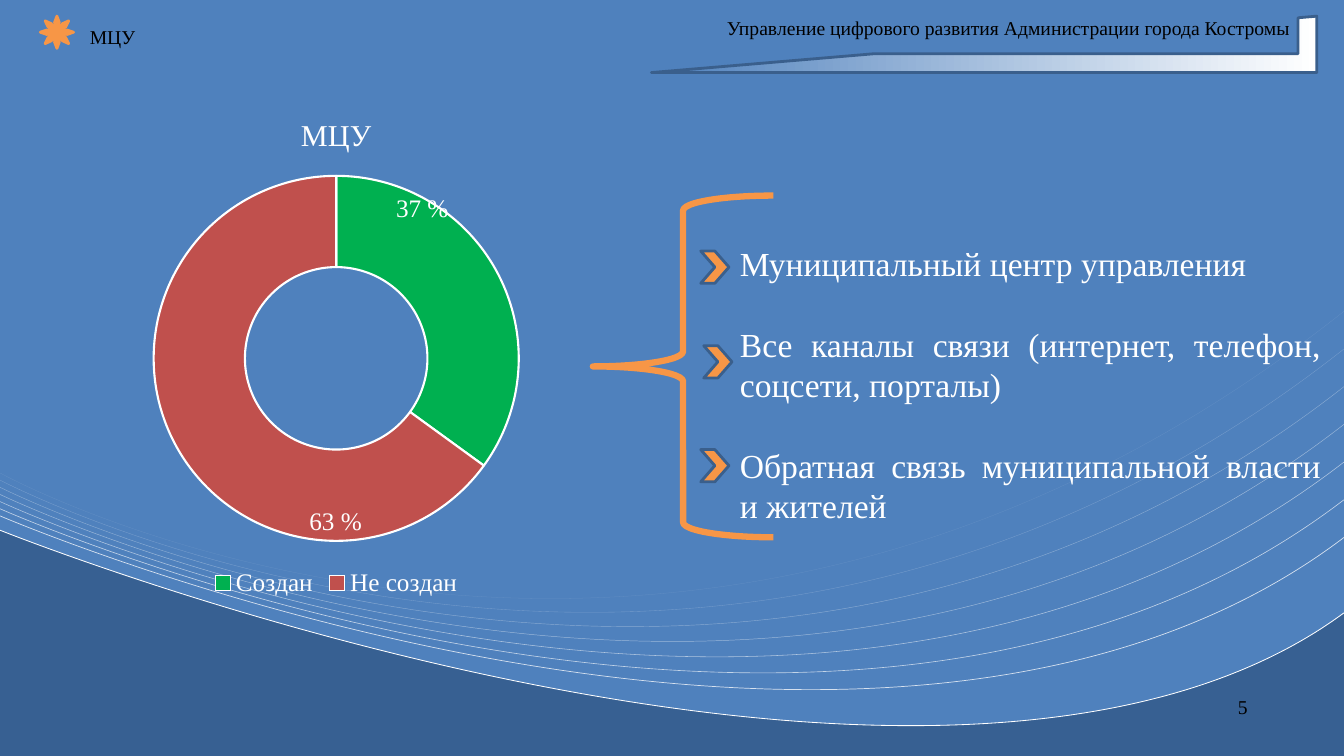
from lxml.etree import SubElement
from pptx import Presentation
from pptx.chart.data import CategoryChartData
from pptx.dml.color import RGBColor
from pptx.enum.chart import XL_CHART_TYPE, XL_LEGEND_POSITION
from pptx.enum.shapes import MSO_SHAPE
from pptx.enum.text import MSO_ANCHOR, PP_ALIGN
from pptx.oxml import parse_xml
from pptx.oxml.ns import nsdecls, qn
from pptx.util import Inches, Pt

NAVY = RGBColor(0x37, 0x60, 0x92)
BLUE = RGBColor(0x4F, 0x81, 0xBD)
EDGE = RGBColor(0x3A, 0x5F, 0x8C)
ORANGE = RGBColor(0xF7, 0x96, 0x46)
GREEN = RGBColor(0x00, 0xB0, 0x50)
RED = RGBColor(0xC0, 0x50, 0x4D)
WHITE = RGBColor(0xFF, 0xFF, 0xFF)
BLACK = RGBColor(0, 0, 0)

WIDTH, HEIGHT = 13.33, 7.5
FONT = "Times New Roman"


def set_font(font, size, color):
    for name, value in {"name": FONT, "size": Pt(size), "bold": False}.items():
        setattr(font, name, value)
    font.color.rgb = color


def write(sp, lines, size, color, wrap=True, **paragraph_format):
    tf = sp.text_frame
    tf.word_wrap = wrap
    tf.vertical_anchor = MSO_ANCHOR.TOP
    for i, line in enumerate(lines):
        p = tf.paragraphs[0] if i == 0 else tf.add_paragraph()
        p.alignment = PP_ALIGN.LEFT
        for name, value in paragraph_format.items():
            setattr(p, name, value)
        if i == 0:
            p.space_before = Pt(0)
        r = p.add_run()
        r.text = line
        set_font(r.font, size, color)


def add_text(slide, box, lines, size, color, **options):
    sp = slide.shapes.add_textbox(*map(Inches, box))
    write(sp, lines, size, color, **options)


def add_figure(slide, kind, box, line, width, fill=None):
    sp = slide.shapes.add_shape(kind, *map(Inches, box))
    sp.shadow.inherit = False
    if fill is None:
        sp.fill.background()
    else:
        sp.fill.solid()
        sp.fill.fore_color.rgb = fill
    sp.line.color.rgb = line
    sp.line.width = Pt(width)
    return sp


def add_wave(slide, i, closed=False):
    """Adds the i-th wave as one cubic curve; a closed one takes in all above it."""
    w, h = Inches(WIDTH), Inches(7.48)
    builder = slide.shapes.build_freeform(0, 0, scale=1.0)
    builder.add_line_segments([(w, 0), (w, h), (0, h)], close=closed)
    sp = builder.convert_to_shape()
    sp.shadow.inherit = False

    start = (0, 5.26 - 0.071 * i)
    control = (9.36 - 0.336 * i, 9.01 - 0.08 * i)
    end = (WIDTH, 6.08 - 0.374 * i)
    segments = [("moveTo", [start]), ("cubicBezTo", [start, control, end])]
    if closed:
        segments += [("lnTo", [(WIDTH, 0)]), ("lnTo", [(0, 0)]), ("close", [])]
    outline = sp._element.find(".//" + qn("a:path"))
    for old in list(outline):
        outline.remove(old)
    for tag, points in segments:
        segment = SubElement(outline, qn("a:" + tag))
        for x, y in points:
            SubElement(segment, qn("a:pt"), x=str(Inches(x)), y=str(Inches(y)))
    return sp


def add_background(slide):
    fill = slide.background.fill
    fill.solid()
    fill.fore_color.rgb = NAVY
    field = add_wave(slide, 0, closed=True)
    field.fill.solid()
    field.fill.fore_color.rgb = BLUE
    field.line.fill.background()
    for i in (0, *range(2, 9)):
        wave = add_wave(slide, i)
        wave.fill.background()
        wave.line.color.rgb = WHITE
        wave.line.width = Pt(0.6 - 0.05 * i)
        if i:
            color = wave.line._ln.find(".//" + qn("a:srgbClr"))
            SubElement(color, qn("a:alpha"), val=str(100000 - 11250 * i))


def add_header(slide, x, y):
    frame = add_figure(slide, MSO_SHAPE.HALF_FRAME, (x + 6.06, y, 6.6, 0.56), EDGE, 2, BLUE)
    frame.rotation = 180
    frame.fill.gradient()
    frame.fill.gradient_angle = 180
    for stop, color in zip(frame.fill.gradient_stops, (BLUE, WHITE)):
        stop.color.rgb = color
    add_text(slide, (x + 6.71, y - 0.05, 5.81, 0.33),
             ["Управление цифрового развития Администрации города Костромы"],
             14, BLACK, wrap=False)
    add_figure(slide, MSO_SHAPE.SUN, (x, y, 0.33, 0.32), ORANGE, 2, ORANGE)

    title = slide.shapes.title
    box = {"left": x + 0.39, "top": y + 0.04, "width": 3.04, "height": 0.33}
    for name, value in box.items():
        setattr(title, name, Inches(value))
    write(title, ["МЦУ"], 14, BLACK)
    slide.shapes._spTree.append(title._element)  # above the background


def add_doughnut(slide, x, y, w, h):
    data = CategoryChartData()
    data.categories = ["Создан", "Не создан"]
    data.add_series("МЦУ", (35, 65))
    chart = slide.shapes.add_chart(
        XL_CHART_TYPE.DOUGHNUT, *map(Inches, (x, y, w, h)), data).chart
    set_font(chart.font, 18, WHITE)
    chart.has_title = True
    chart.chart_title.text_frame.text = "МЦУ"
    set_font(chart.chart_title.text_frame.paragraphs[0].runs[0].font, 21.6, WHITE)
    chart.has_legend = True
    chart.legend.position = XL_LEGEND_POSITION.BOTTOM
    chart.legend.include_in_layout = False
    set_font(chart.legend.font, 18, WHITE)

    plot = chart.plots[0]
    plot.vary_by_categories = True
    plot.has_data_labels = False
    for i, color in enumerate((GREEN, RED)):
        point = plot.series[0].points[i].format
        point.fill.solid()
        point.fill.fore_color.rgb = color
        point.line.color.rgb = WHITE
        point.line.width = Pt(1.5)

    area = chart._chartSpace.find(".//" + qn("c:plotArea"))
    area.find(".//" + qn("c:holeSize")).set("val", "75")
    for old in area.findall(qn("c:layout")):
        area.remove(old)
    sizes = {"x": 0.22, "y": 0.16, "w": 0.56, "h": 0.72}
    values = "".join(f'<c:{k} val="{v}"/>' for k, v in sizes.items())
    area.insert(0, parse_xml(
        f'<c:layout {nsdecls("c")}><c:manualLayout><c:layoutTarget val="inner"/>'
        f'<c:xMode val="edge"/><c:yMode val="edge"/>{values}'
        '</c:manualLayout></c:layout>'))

    for label, dx, dy in (("37 %", 3.83, 0.92), ("63 %", 2.97, 4.02)):
        add_text(slide, (x + dx, y + dy, 0.73, 0.4), [label], 18, WHITE, wrap=False)


def add_features(slide, x, y):
    add_text(slide, (x + 1.36, y + 0.42, 5.96, 2.8),
             ["Муниципальный центр управления",
              "Все каналы связи (интернет, телефон, соцсети, порталы)",
              "Обратная связь муниципальной власти и жителей"],
             24, WHITE, alignment=PP_ALIGN.JUSTIFY, space_before=Pt(29))
    brace = add_figure(slide, MSO_SHAPE.LEFT_BRACE, (x, y, 1.79, 3.39), ORANGE, 4.5)
    brace.adjustments[0] = 0.083
    for dx, dy in ((1.07, 0.55), (1.1, 1.49), (1.07, 2.52)):
        add_figure(slide, MSO_SHAPE.CHEVRON, (x + dx, y + dy, 0.28, 0.32), EDGE, 2, ORANGE)


def main():
    prs = Presentation()
    prs.slide_width, prs.slide_height = Inches(WIDTH), Inches(HEIGHT)
    slide = prs.slides.add_slide(prs.slide_layouts[5])
    add_background(slide)
    add_header(slide, 0.4, 0.16)
    add_text(slide, (12.18, 6.84, 0.89, 0.33), ["5"], 14, BLACK)
    add_doughnut(slide, 0, 0.94, 6.67, 5.03)
    add_features(slide, 5.88, 1.94)
    prs.save("out.pptx")


if __name__ == "__main__":
    main()
